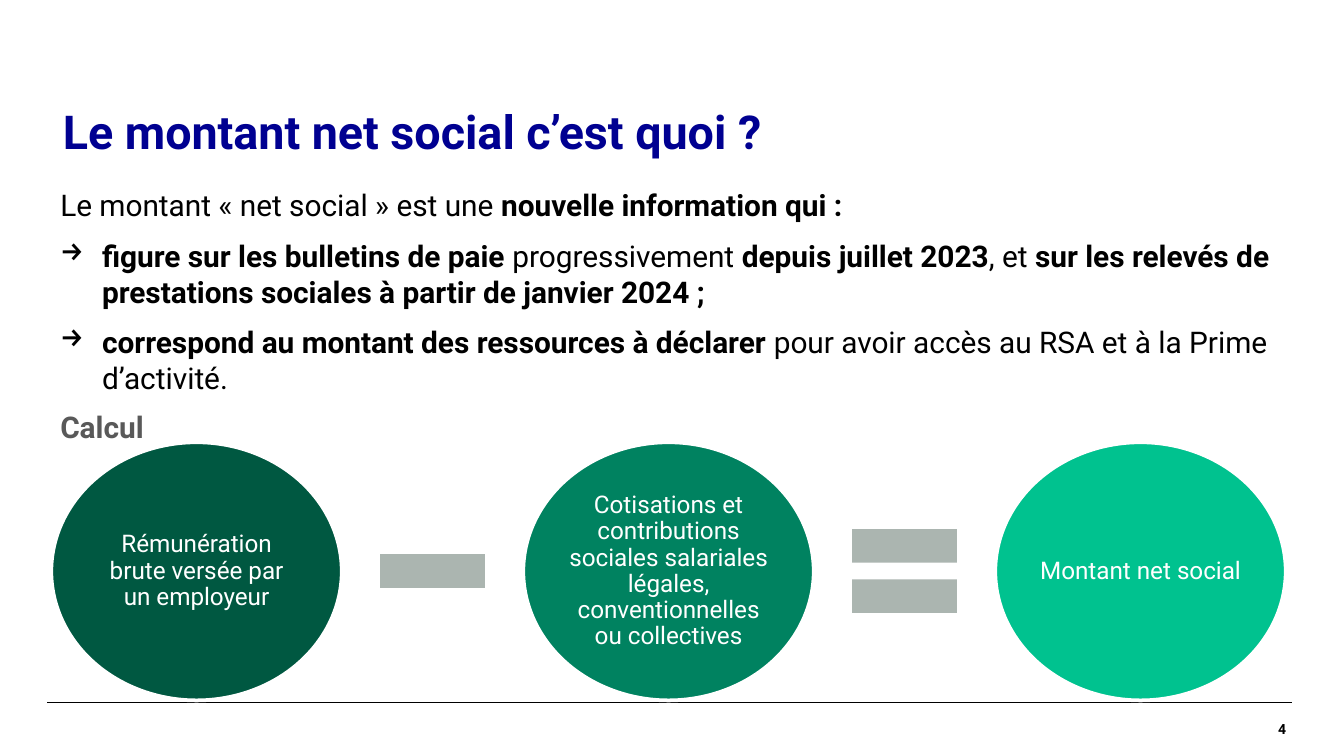
from lxml import etree
from pptx import Presentation
from pptx.dml.color import RGBColor
from pptx.enum.shapes import MSO_CONNECTOR, MSO_SHAPE
from pptx.enum.text import MSO_ANCHOR, PP_ALIGN
from pptx.oxml.ns import qn
from pptx.util import Cm, Pt


def color(hex_string):
    return RGBColor.from_string(hex_string)


def write(frame, text, size=16, fill="000000", align=PP_ALIGN.LEFT, anchor=MSO_ANCHOR.TOP,
          margins=(0, 0), left=0, indent=0, spacing=None, after=0, bullet=None):
    """Add a paragraph to the frame; parts between ** are bold."""
    frame.word_wrap = True
    frame.vertical_anchor = anchor
    frame.margin_left = frame.margin_right = Cm(margins[0])
    frame.margin_top = frame.margin_bottom = Cm(margins[1])
    paragraph = frame.add_paragraph() if frame.text else frame.paragraphs[0]
    properties = paragraph._p.get_or_add_pPr()
    properties.set("marL", str(Cm(left)))
    properties.set("indent", str(Cm(indent)))
    if bullet:
        etree.SubElement(properties, qn("a:buChar")).set("char", bullet)
    paragraph.alignment = align
    paragraph.space_after = Pt(after)
    if spacing:
        paragraph.line_spacing = spacing
    for number, part in enumerate(text.split("**")):
        if part:
            span = paragraph.add_run()
            span.text = part
            span.font.name = "Roboto"
            span.font.size = Pt(size)
            span.font.bold = number % 2 == 1
            span.font.color.rgb = color(fill)


deck = Presentation()
deck.slide_width, deck.slide_height = Cm(25.4), Cm(14.29)
page = deck.slides.add_slide(deck.slide_layouts[6])

# Footer rule and page number
for left in (0.89, 0.99):
    rule = page.shapes.add_connector(
        MSO_CONNECTOR.STRAIGHT, Cm(left), Cm(13.28), Cm(left + 23.42), Cm(13.28))
    rule.line.color.rgb = color("000000")
    rule.line.width = Pt(0.8)
    etree.SubElement(rule._element.spPr, qn("a:effectLst"))

page_number = page.shapes.add_textbox(Cm(20.55), Cm(13.28), Cm(3.76), Cm(1))
write(page_number.text_frame, "**4**", size=7.5, align=PP_ALIGN.RIGHT, anchor=MSO_ANCHOR.MIDDLE)

# Title and explanation
title = page.shapes.add_textbox(Cm(0.89), Cm(1.8), Cm(23.4), Cm(1.5))
write(title.text_frame, "**Le montant net social c’est quoi ?**", size=25, fill="000091",
      anchor=MSO_ANCHOR.MIDDLE, margins=(0.25, 0.13), left=0.05, spacing=0.9)

body = page.shapes.add_textbox(Cm(0.89), Cm(3.53), Cm(23.4), Cm(4.19))
write(body.text_frame, "Le montant « net social » est une **nouvelle information qui :**",
      left=0.25, after=8)
for point in (
    "**figure sur les bulletins de paie **progressivement **depuis juillet 2023**, et "
    "**sur les relevés de prestations sociales à partir de janvier 2024 ;**",
    "**correspond au montant des ressources à déclarer **pour avoir accès au RSA "
    "et à la Prime d’activité.",
):
    write(body.text_frame, point, left=1.04, indent=-0.79, after=8, bullet="→")

# Calculation: three circles joined by two operators
circles = [
    ("Rémunération brute versée par un employeur", "005841"),
    ("Cotisations et contributions sociales salariales légales, "
     "conventionnelles ou collectives", "008260"),
    ("Montant net social", "00C28F"),
]
operators = [MSO_SHAPE.MATH_MINUS, MSO_SHAPE.MATH_EQUAL]
pitch = 8.92

for column, (label, fill) in enumerate(circles):
    circle = page.shapes.add_shape(
        MSO_SHAPE.OVAL, Cm(0.97 + column * pitch), Cm(8.36), Cm(5.49), Cm(4.88))
    circle.shadow.inherit = False
    circle.fill.solid()
    circle.fill.fore_color.rgb = color(fill)
    circle.line.color.rgb = color("FFFFFF")
    circle.line.width = Pt(2)
    write(circle.text_frame, label, size=13, fill="FFFFFF", align=PP_ALIGN.CENTER,
          anchor=MSO_ANCHOR.MIDDLE, spacing=0.9)

for column, operator in enumerate(operators):
    sign = page.shapes.add_shape(
        operator, Cm(6.83 + column * pitch), Cm(9.45), Cm(2.69), Cm(2.69))
    sign.shadow.inherit = False
    sign.fill.solid()
    sign.fill.fore_color.rgb = color("ABB5B0")
    sign.line.fill.background()

heading = page.shapes.add_textbox(Cm(0.89), Cm(7.72), Cm(3.2), Cm(1.47))
write(heading.text_frame, "**Calcul**", fill="595959", indent=0.25, after=8)

deck.save("out.pptx")
